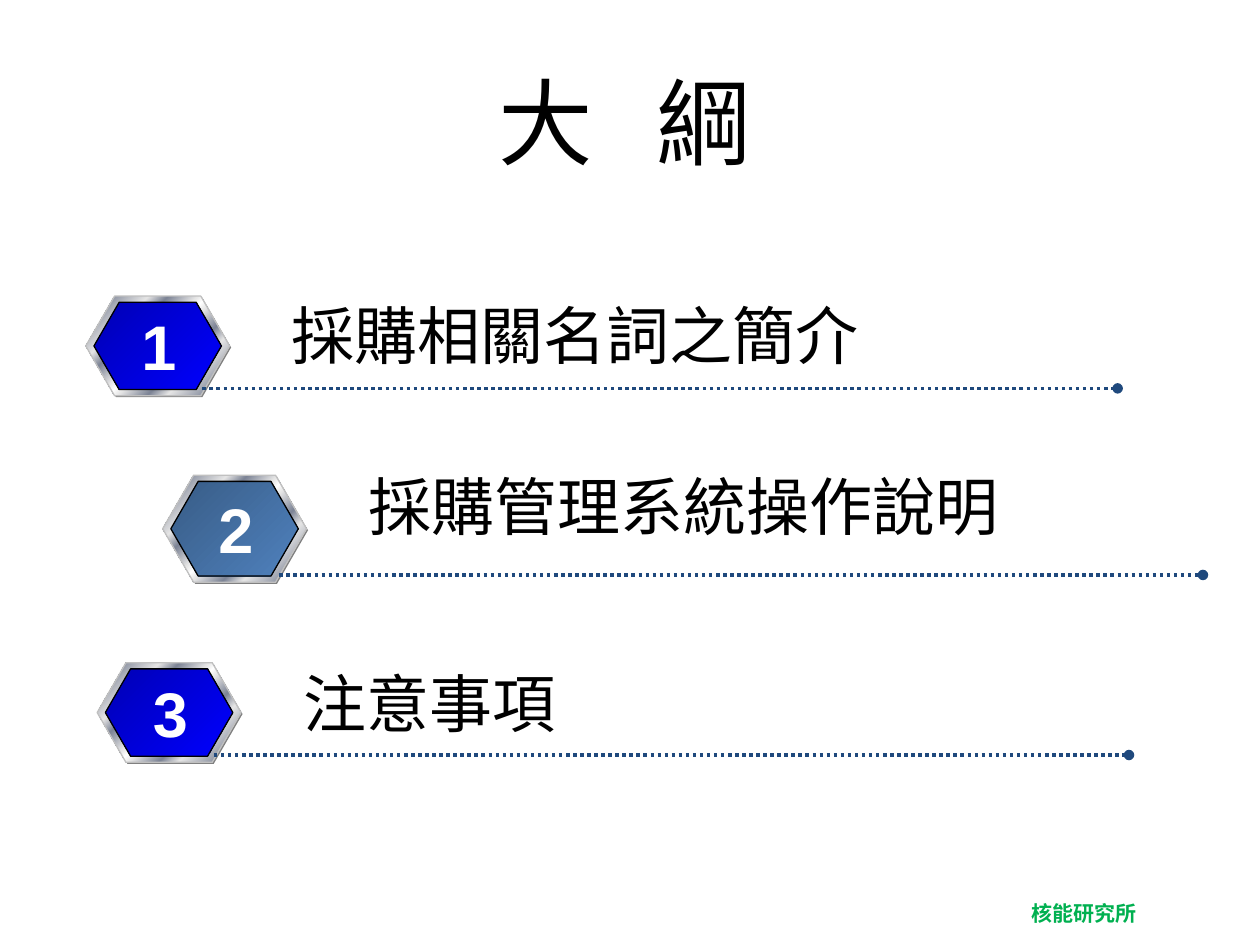
from lxml.etree import SubElement
from pptx import Presentation
from pptx.dml.color import RGBColor
from pptx.enum.dml import MSO_LINE_DASH_STYLE as Dash
from pptx.enum.shapes import MSO_CONNECTOR as Connector, MSO_SHAPE as Shape
from pptx.enum.text import MSO_ANCHOR as Anchor, PP_ALIGN as Align
from pptx.oxml.ns import qn
from pptx.util import Cm, Pt

TITLE = ("大", " ", "綱")
FOOTER = "核能研究所"
# Sizes in cm; label_shift moves the label from the top of its badge.
ROWS = [
    dict(number="1", label="採購相關名詞之簡介", left=1.73, top=5.97, height=2.01,
         rule=18.45, label_shift=-0.13, label_width=12.07, fill="blue"),
    dict(number="2", label="採購管理系統操作說明", left=3.28, top=9.58, height=2.16,
         rule=18.62, label_shift=-0.28, label_width=13.34, fill="steel"),
    dict(number="3", label="注意事項", left=1.96, top=13.36, height=2.01,
         rule=18.45, label_shift=-0.1, label_width=5.64, fill="blue"),
]
COLORS = dict(black="000000", white="FFFFFF", green="00B050", navy="1F497D",
              blue="0000FF", steel="4F81BD", shadow="808080", rim="C0C0C0",
              silver="E6E6E6", slate="7D8496")
METAL = [(0, "silver"), (8, "slate"), (26, "silver"), (34, "slate"),
         (46, "silver"), (50, "white"), (54, "silver"), (66, "slate"),
         (74, "silver"), (92, "slate"), (100, "silver")]
CJK = "Noto Sans CJK SC"
BADGE_WIDTH = 2.9
FACE_WIDTH = 2.57
TEXT_HEIGHT = 1.8


def rgb(name):
    return RGBColor.from_string(COLORS[name])


def add_span(para, text, size=36, font=CJK, color="black", bold=False, spacing=0):
    span = para.add_run()
    span.text = text
    span.font.size = Pt(size)
    span.font.bold = bold
    span.font.color.rgb = rgb(color)
    span.font.name = font
    props = span.font._element
    SubElement(props, qn("a:ea"), typeface=CJK)
    if spacing:
        props.set("spc", str(spacing * 100))


def add_text(shapes, text, left, top, width, height, wrap=False,
             align=Align.LEFT, margins=(0.25, 0.13), **style):
    box = shapes.add_textbox(Cm(left), Cm(top), Cm(width), Cm(height))
    frame = box.text_frame
    frame.word_wrap = wrap
    frame.margin_left = frame.margin_right = Cm(margins[0])
    frame.margin_top = frame.margin_bottom = Cm(margins[1])
    para = frame.paragraphs[0]
    para.alignment = align
    add_span(para, text, **style)


def fill_gradient(shape, stops):
    """Fill along the 45 degree diagonal; a stop is (percent, color[, shade])."""
    shape.fill.gradient()
    shape.fill.gradient_angle = 315
    stop_list = shape._element.spPr.find(qn("a:gradFill")).find(qn("a:gsLst"))
    stop_list.clear()
    for percent, color, *shade in stops:
        stop = SubElement(stop_list, qn("a:gs"), pos=str(percent * 1000))
        tone = SubElement(stop, qn("a:srgbClr"), val=COLORS[color])
        for value in shade:
            SubElement(tone, qn("a:shade"), val=str(value * 1000))


def add_hexagon(shapes, left, top, width, height, fill=None, stops=None, line=None):
    hexagon = shapes.add_shape(Shape.HEXAGON, Cm(left), Cm(top), Cm(width), Cm(height))
    hexagon.shadow.inherit = False
    hexagon.adjustments[0] = 0.289
    if stops:
        fill_gradient(hexagon, stops)
    else:
        hexagon.fill.solid()
        hexagon.fill.fore_color.rgb = rgb(fill)
    if line:
        hexagon.line.color.rgb = rgb(line)
        hexagon.line.width = Pt(0.75)
    else:
        hexagon.line.fill.background()


def add_rule(shapes, left, top, length):
    rule = shapes.add_connector(Connector.STRAIGHT, Cm(left), Cm(top),
                                Cm(left + length), Cm(top))
    rule.line.color.rgb = rgb("navy")
    rule.line.width = Pt(2)
    rule.line.dash_style = Dash.ROUND_DOT
    SubElement(rule.line._get_or_add_ln(), qn("a:tailEnd"), type="oval")
    SubElement(rule._element.spPr, qn("a:effectLst"))


def add_row(slide, row):
    shapes = slide.shapes.add_group_shape().shapes
    left, top, height = row["left"], row["top"], row["height"]
    face_height = height - 0.25
    add_hexagon(shapes, left + 0.03, top + 0.03, BADGE_WIDTH, height, fill="shadow")
    add_hexagon(shapes, left, top, BADGE_WIDTH, height, stops=METAL, line="rim")
    add_hexagon(shapes, left + (BADGE_WIDTH - FACE_WIDTH) / 2,
                top + (height - face_height) / 2, FACE_WIDTH, face_height,
                stops=[(0, row["fill"], 46), (100, row["fill"])], line="black")
    add_rule(shapes, left + 2.35, top + height - 0.15, row["rule"])
    add_text(shapes, row["label"], left + 3.9, top + row["label_shift"],
             row["label_width"], TEXT_HEIGHT, font="Arial")
    add_text(shapes, row["number"], left + 0.6, top + (height - TEXT_HEIGHT) / 2,
             1.75, TEXT_HEIGHT, wrap=True, align=Align.CENTER,
             font="Arial", color="white", bold=True)


def add_title(slide):
    title = slide.shapes.title
    title.left, title.top, title.width, title.height = Cm(4.6), Cm(1.12), Cm(16), Cm(2.62)
    title.text_frame.vertical_anchor = Anchor.MIDDLE
    para = title.text_frame.paragraphs[0]
    para.alignment = Align.CENTER
    for part in TITLE:
        add_span(para, part, size=54, spacing=24 if part == " " else 0)


def main():
    deck = Presentation()
    deck.slide_width, deck.slide_height = Cm(25.4), Cm(19.05)
    slide = deck.slides.add_slide(deck.slide_layouts[5])
    add_title(slide)
    for row in ROWS:
        add_row(slide, row)
    add_text(slide.shapes, FOOTER, 20.57, 18.06, 2.59, 0.74, margins=(0.23, 0.1),
             size=12, color="green", bold=True)
    deck.save("out.pptx")


if __name__ == "__main__":
    main()
